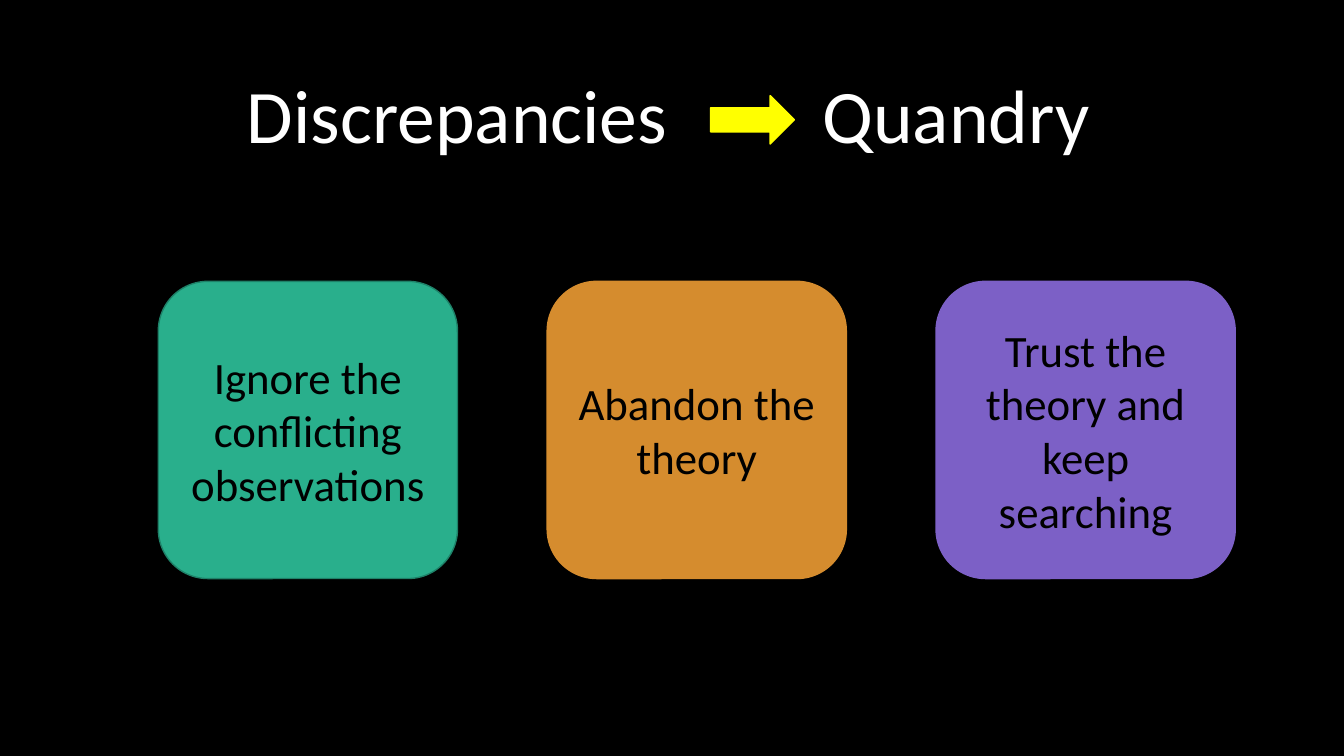
from lxml import etree
from pptx import Presentation
from pptx.dml import color
from pptx.enum import shapes, text
from pptx.oxml import ns
from pptx.util import Cm, Pt


def paint(part, fill, line):
    part.shadow.inherit = False
    part.fill.solid()
    part.fill.fore_color.rgb = color.RGBColor.from_string(fill)
    part.line.color.rgb = color.RGBColor.from_string(line)
    part.line.width = Pt(1)


def write(paragraph, words, size, ink):
    run = paragraph.add_run()
    run.text = words
    run.font.name = "Calibri"
    run.font.size = Pt(size)
    run.font.color.rgb = color.RGBColor.from_string(ink)


deck = Presentation()
deck.slide_width, deck.slide_height = Cm(33.87), Cm(19.05)
slide = deck.slides.add_slide(deck.slide_layouts[5])
slide.background.fill.solid()
slide.background.fill.fore_color.rgb = color.RGBColor.from_string("000000")

# Heading: a tab leaves room for the arrow between the two words
heading = slide.shapes.title
heading.left, heading.top = Cm(5.97), Cm(1.57)
heading.width, heading.height = Cm(21.95), Cm(2.57)
heading.text_frame.auto_size = text.MSO_AUTO_SIZE.NONE
heading.text_frame.word_wrap = False
heading_line = heading.text_frame.paragraphs[0]
heading_line.alignment = text.PP_ALIGN.LEFT
tabs = etree.SubElement(heading_line._p.get_or_add_pPr(), ns.qn("a:tabLst"))
etree.SubElement(tabs, ns.qn("a:tab"), pos=str(Cm(14.5)), algn="l")
write(heading_line, "Discrepancies\tQuandry", 54, "FFFFFF")

arrow = slide.shapes.add_shape(
    shapes.MSO_SHAPE.RIGHT_ARROW, Cm(17.91), Cm(2.41), Cm(2.11), Cm(1.22))
paint(arrow, "FFFF00", "FFFF00")

# Three possible responses, evenly spaced
responses = [
    ("Ignore the conflicting observations", "29AF8C", "1E8168"),
    ("Abandon the theory", "D58C2E", "D58C2E"),
    ("Trust the theory and keep searching", "7C60C6", "7C60C6"),
]
for column, (response, fill, border) in enumerate(responses):
    card = slide.shapes.add_shape(
        shapes.MSO_SHAPE.ROUNDED_RECTANGLE,
        Cm(3.99 + 9.8 * column), Cm(7.09), Cm(7.54), Cm(7.49))
    paint(card, fill, border)
    card.text_frame.word_wrap = True
    card.text_frame.vertical_anchor = text.MSO_ANCHOR.MIDDLE
    card_line = card.text_frame.paragraphs[0]
    card_line.alignment = text.PP_ALIGN.CENTER
    write(card_line, response, 32, "000000")

deck.save("out.pptx")
